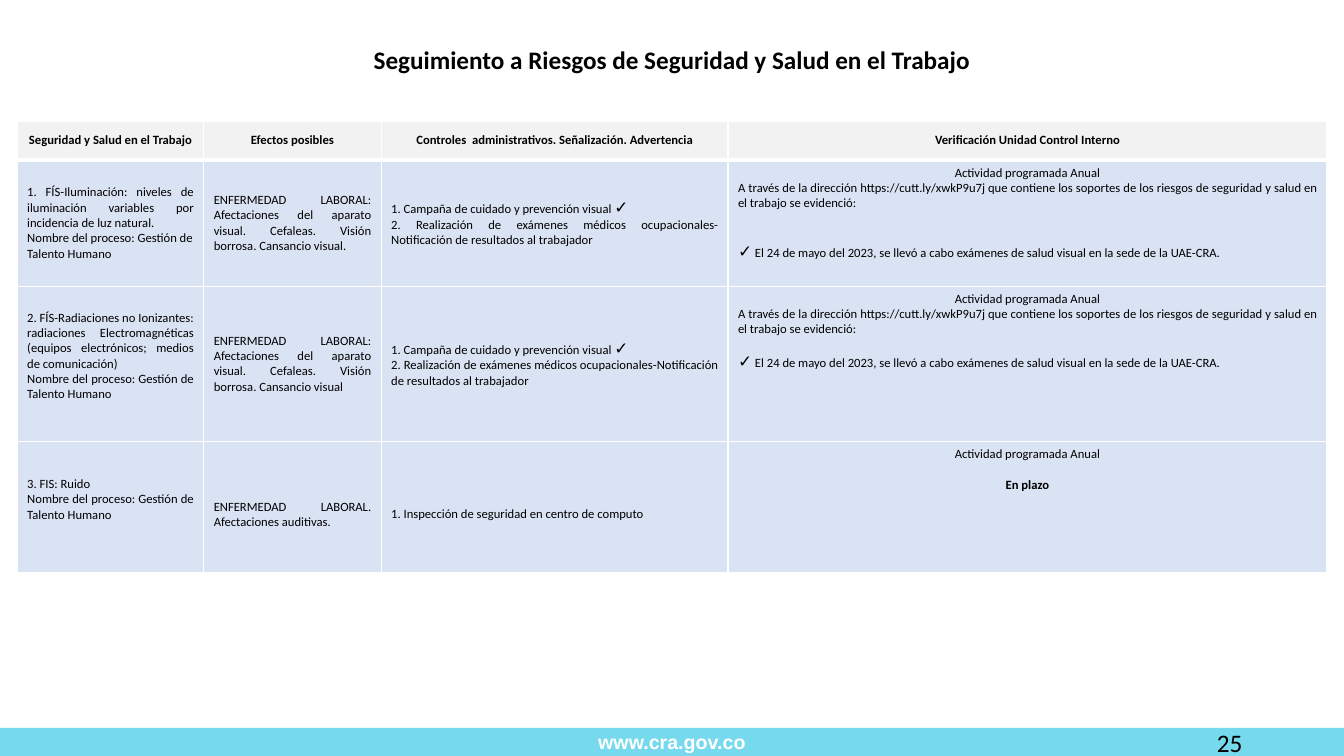
from lxml import etree
from pptx import Presentation
from pptx.dml.color import RGBColor
from pptx.enum import shapes, text
from pptx.oxml import ns
from pptx.util import Inches, Pt

BLACK = RGBColor(0x00, 0x00, 0x00)
WHITE = RGBColor(0xFF, 0xFF, 0xFF)
HEADER_GREY = RGBColor(0xF2, 0xF2, 0xF2)
ROW_BLUE = RGBColor(0xDA, 0xE3, 0xF3)
FOOTER_CYAN = RGBColor(0x77, 0xD9, 0xED)

CENTER = text.PP_ALIGN.CENTER
JUSTIFY = text.PP_ALIGN.JUSTIFY
LEFT = text.PP_ALIGN.LEFT
RIGHT = text.PP_ALIGN.RIGHT
MIDDLE = text.MSO_ANCHOR.MIDDLE
TOP = text.MSO_ANCHOR.TOP

CHECK = "✓"
COLUMN_WIDTHS = [1.85, 1.76, 3.44, 5.94]
ROW_HEIGHTS = [0.39, 1.25, 1.54, 1.3]
HEADERS = [
    "Seguridad y Salud en el Trabajo",
    "Efectos posibles",
    "Controles  administrativos. Señalización. Advertencia",
    "Verificación Unidad Control Interno",
]

PROCESS = "Nombre del proceso: Gestión de Talento Humano"
CAMPAIGN = "1. Campaña de cuidado y prevención visual ✓"
SCHEDULE = ("Actividad programada Anual", {"align": CENTER})
EVIDENCE = (
    "A través de la dirección https://cutt.ly/xwkP9u7j que contiene los soportes "
    "de los riesgos de seguridad y salud en el trabajo se evidenció:"
)
EXAMS = (
    "✓ El 24 de mayo del 2023, se llevó a cabo exámenes de salud visual "
    "en la sede de la UAE-CRA."
)

RISKS = [
    [
        [
            "1. FÍS-Iluminación: niveles de iluminación variables por incidencia de luz natural.",
            (PROCESS, {"align": LEFT}),
        ],
        ["ENFERMEDAD LABORAL: Afectaciones del aparato visual. Cefaleas. Visión borrosa. Cansancio visual."],
        [
            CAMPAIGN,
            "2. Realización de exámenes médicos ocupacionales- Notificación de resultados al trabajador",
        ],
        [SCHEDULE, EVIDENCE, (EXAMS, {"align": LEFT, "before": 22})],
    ],
    [
        [
            "2. FÍS-Radiaciones no Ionizantes: radiaciones Electromagnéticas "
            "(equipos electrónicos; medios de comunicación)",
            PROCESS,
        ],
        ["ENFERMEDAD LABORAL: Afectaciones del aparato visual. Cefaleas. Visión borrosa. Cansancio visual"],
        [
            CAMPAIGN,
            "2. Realización de exámenes médicos ocupacionales-Notificación de resultados al trabajador",
        ],
        [SCHEDULE, EVIDENCE, (EXAMS, {"before": 11})],
    ],
    [
        ["3. FIS: Ruido", PROCESS],
        ["ENFERMEDAD LABORAL. Afectaciones auditivas."],
        ["1. Inspección de seguridad en centro de computo"],
        [SCHEDULE, ("En plazo", {"align": CENTER, "before": 11, "bold": True})],
    ],
]

BOTTOM_MARGINS = {(2, 0): 0.2, (3, 0): 0.2}
TOP_MARGINS = {(3, 1): 0.2, (3, 2): 0.2}


def write(paragraph, content, size=9, font="Calibri", color=BLACK, bold=False,
          align=JUSTIFY, before=0):
    paragraph.alignment = align
    paragraph.space_before = Pt(before)
    lead, check, rest = content.partition(CHECK)
    for part in filter(None, (lead, check, rest)):
        run = paragraph.add_run()
        run.text = part
        run.font.size = Pt(12 if part == CHECK else size)
        run.font.name = "Arial" if part == CHECK else font
        run.font.bold = bold
        run.font.color.rgb = color


def add_title(slide, content):
    title = slide.shapes.title
    title.left, title.top = Inches(0.16), Inches(0.39)
    title.width, title.height = Inches(13.01), Inches(0.4)
    title.text_frame.vertical_anchor = TOP
    write(title.text_frame.paragraphs[0], content, size=18, bold=True, align=CENTER)


def add_footer(slide, address, number):
    band = slide.shapes.add_shape(
        shapes.MSO_SHAPE.RECTANGLE, 0, Inches(7.22), Inches(13.33), Inches(0.28))
    band.shadow.inherit = False
    band.fill.solid()
    band.fill.fore_color.rgb = FOOTER_CYAN
    band.line.fill.background()
    band.text_frame.vertical_anchor = MIDDLE
    write(band.text_frame.paragraphs[0], address, size=14, font="Arial",
          color=WHITE, bold=True, align=CENTER)

    page = slide.shapes.add_textbox(Inches(9.42), Inches(7.17), Inches(3), Inches(0.4))
    page.text_frame.word_wrap = True
    write(page.text_frame.paragraphs[0], number, size=18, align=RIGHT)


def add_borders(cell, bottom):
    properties = cell._tc.get_or_add_tcPr()
    widths = {"a:lnL": 1, "a:lnR": 1, "a:lnT": 1, "a:lnB": bottom}
    for position, (side, width) in enumerate(widths.items()):
        line = etree.Element(ns.qn(side), w=str(Pt(width)))
        fill = etree.SubElement(line, ns.qn("a:solidFill"))
        etree.SubElement(fill, ns.qn("a:srgbClr"), val=str(WHITE))
        properties.insert(position, line)


def fill_cell(cell, paragraphs, color, anchor=MIDDLE, bottom=1, **style):
    cell.fill.solid()
    cell.fill.fore_color.rgb = color
    cell.vertical_anchor = anchor
    add_borders(cell, bottom)
    for index, entry in enumerate(paragraphs):
        content, own_style = entry if isinstance(entry, tuple) else (entry, {})
        frame = cell.text_frame
        paragraph = frame.add_paragraph() if index else frame.paragraphs[0]
        write(paragraph, content, **{**style, **own_style})


def add_risk_table(slide):
    risks = slide.shapes.add_table(
        len(ROW_HEIGHTS), len(COLUMN_WIDTHS), Inches(0.17), Inches(1.2),
        Inches(sum(COLUMN_WIDTHS)), Inches(sum(ROW_HEIGHTS))).table
    for column, width in zip(risks.columns, COLUMN_WIDTHS):
        column.width = Inches(width)
    for row, height in zip(risks.rows, ROW_HEIGHTS):
        row.height = Inches(height)

    for column, header in enumerate(HEADERS):
        fill_cell(risks.cell(0, column), [header], HEADER_GREY, bottom=3,
                  bold=True, align=CENTER)
    for row, risk in enumerate(RISKS, start=1):
        for column, paragraphs in enumerate(risk):
            anchor = TOP if column == len(HEADERS) - 1 else MIDDLE
            fill_cell(risks.cell(row, column), paragraphs, ROW_BLUE, anchor)
    for place, margin in TOP_MARGINS.items():
        risks.cell(*place).margin_top = Inches(margin)
    for place, margin in BOTTOM_MARGINS.items():
        risks.cell(*place).margin_bottom = Inches(margin)


def main():
    deck = Presentation()
    deck.slide_width, deck.slide_height = Inches(13.33), Inches(7.5)
    slide = deck.slides.add_slide(deck.slide_layouts[5])
    add_footer(slide, "www.cra.gov.co", "25")
    add_title(slide, "Seguimiento a Riesgos de Seguridad y Salud en el Trabajo")
    add_risk_table(slide)
    deck.save("out.pptx")


if __name__ == "__main__":
    main()
